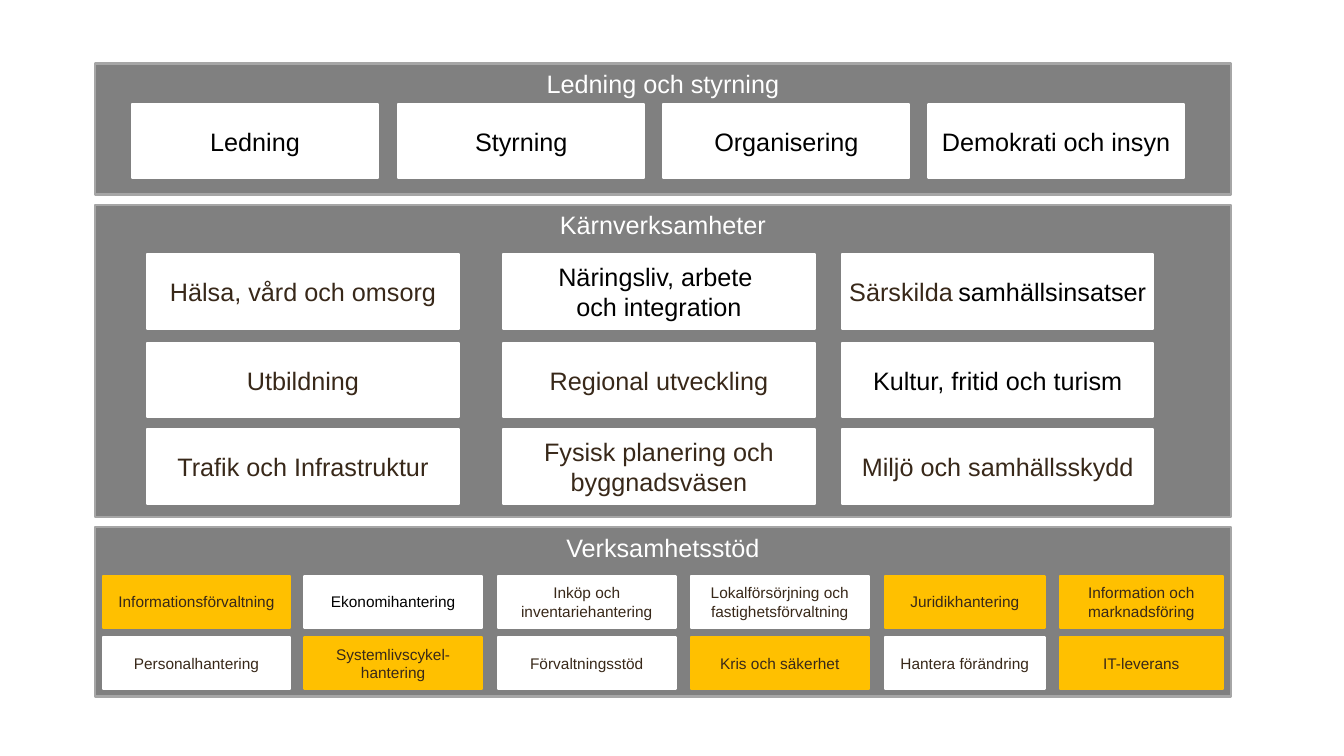
from pptx import Presentation
from pptx.dml.color import RGBColor
from pptx.enum.shapes import MSO_SHAPE
from pptx.enum.text import MSO_ANCHOR, PP_ALIGN
from pptx.util import Pt

RECTANGLE = MSO_SHAPE.RECTANGLE
TOP, MIDDLE = MSO_ANCHOR.TOP, MSO_ANCHOR.MIDDLE
CENTER = PP_ALIGN.CENTER
PX = 9144
GREY, EDGE, WHITE, YELLOW = "808080", "A6A6A6", "FFFFFF", "FFC000"
BLACK, BROWN = "000000", "382819"


def color(value):
    return RGBColor.from_string(value)


def add_box(bounds, fill, line, lines, anchor=MIDDLE, side_inset=10):
    shape = slide.shapes.add_shape(RECTANGLE, *[length * PX for length in bounds])
    shape.shadow.inherit = False
    shape.fill.solid()
    shape.fill.fore_color.rgb = color(fill)
    shape.line.color.rgb = color(line)
    shape.line.width = Pt(1.5)
    frame = shape.text_frame
    frame.word_wrap = True
    frame.vertical_anchor = anchor
    frame.margin_left = frame.margin_right = side_inset * PX
    frame.margin_top = frame.margin_bottom = 5 * PX
    paragraph = frame.paragraphs[0]
    paragraph.alignment = CENTER
    for index, runs in enumerate(lines):
        if index:
            paragraph.add_line_break()
        for text, size, text_color in runs:
            run = paragraph.add_run()
            run.text = text
            run.font.name = "Arial"
            run.font.size = Pt(size)
            run.font.color.rgb = color(text_color)


presentation = Presentation()
presentation.slide_width = 1333 * PX
presentation.slide_height = 750 * PX
slide = presentation.slides.add_slide(presentation.slide_layouts[6])

bands = [
    ("Ledning och styrning", 63, 130),
    ("Kärnverksamheter", 203, 310),
    ("Verksamhetsstöd", 523, 168),
]
for heading, top, height in bands:
    add_box((94, top, 1127, height), GREY, EDGE, [[(heading, 18, WHITE)]], TOP)

management = [
    ("Ledning", 131, 244),
    ("Styrning", 395, 244),
    ("Organisering", 658, 244),
    ("Demokrati och insyn", 921, 253),
]
for text, left, width in management:
    add_box((left, 103, width, 74), WHITE, WHITE, [[(text, 18, BLACK)]])

core_lefts = [146, 499, 835]
core_rows = [
    (252, [
        ([[("Hälsa, vård och omsorg", 18, BROWN)]], 10),
        ([[("Näringsliv, arbete ", 18, BLACK)], [("och integration", 18, BLACK)]], 10),
        ([[("Särskilda", 18, BROWN), (" ", 14, BROWN), ("samhällsinsatser", 18, BLACK)]], 0),
    ]),
    (340, [
        ([[("Utbildning", 18, BROWN)]], 10),
        ([[("Regional utveckling", 18, BROWN)]], 10),
        ([[("Kultur, fritid och turism", 18, BLACK)]], 10),
    ]),
    (426, [
        ([[("Trafik och Infrastruktur", 18, BROWN)]], 10),
        ([[("Fysisk planering och byggnadsväsen", 18, BROWN)]], 10),
        ([[("Miljö och samhällsskydd", 18, BROWN)]], 10),
    ]),
]
for top, cells in core_rows:
    for left, (lines, side_inset) in zip(core_lefts, cells):
        add_box((left, top, 309, 74), WHITE, WHITE, lines, side_inset=side_inset)

support_columns = [(102, 186), (302, 176), (494, 176), (685, 177), (878, 158), (1051, 162)]
support_rows = [
    (571, [
        ("Informationsförvaltning", YELLOW, BROWN),
        ("Ekonomihantering", WHITE, BLACK),
        ("Inköp och inventariehantering", WHITE, BROWN),
        ("Lokalförsörjning och fastighetsförvaltning", WHITE, BROWN),
        ("Juridikhantering", YELLOW, BROWN),
        ("Information och marknadsföring", YELLOW, BROWN),
    ]),
    (632, [
        ("Personalhantering", WHITE, BROWN),
        ("Systemlivscykel-hantering", YELLOW, BROWN),
        ("Förvaltningsstöd", WHITE, BROWN),
        ("Kris och säkerhet", YELLOW, BROWN),
        ("Hantera förändring", WHITE, BROWN),
        ("IT-leverans", YELLOW, BROWN),
    ]),
]
for top, cells in support_rows:
    for (left, width), (text, fill, text_color) in zip(support_columns, cells):
        add_box((left, top, width, 52), fill, fill, [[(text, 11, text_color)]], side_inset=0)

presentation.save("out.pptx")
